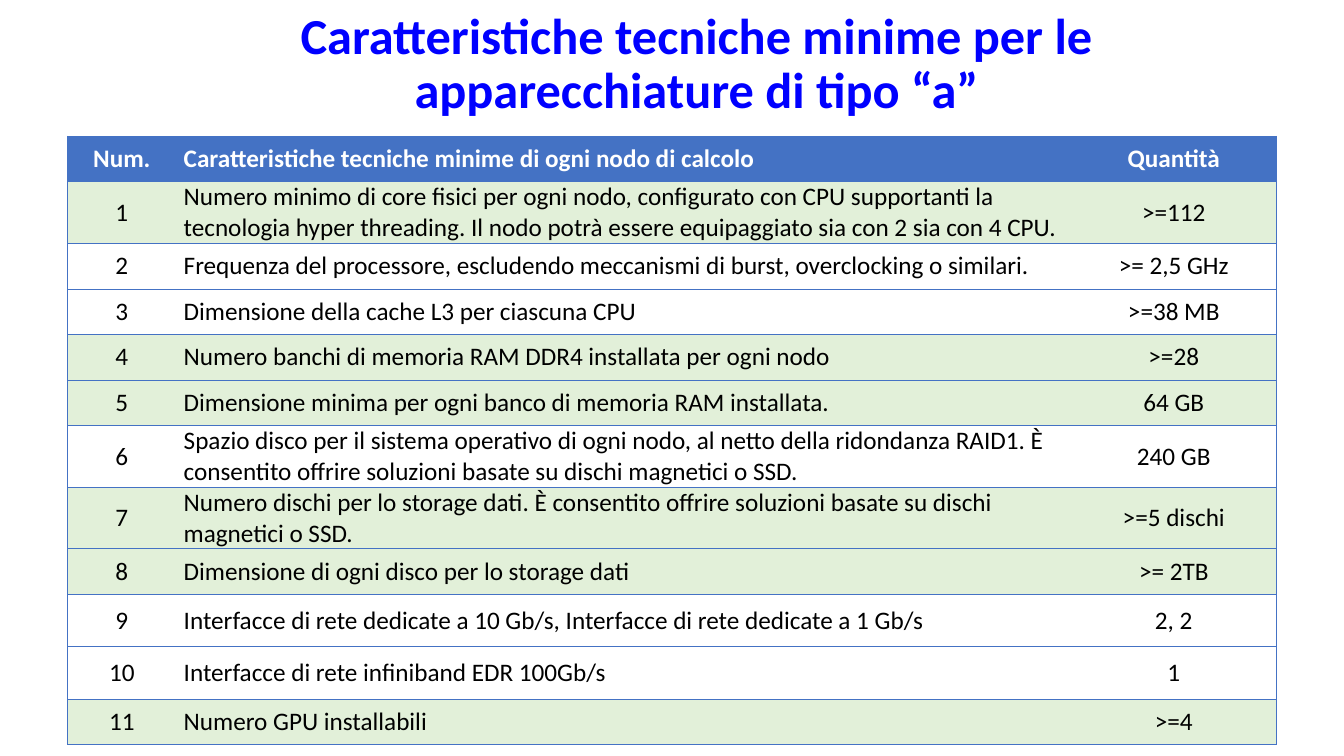
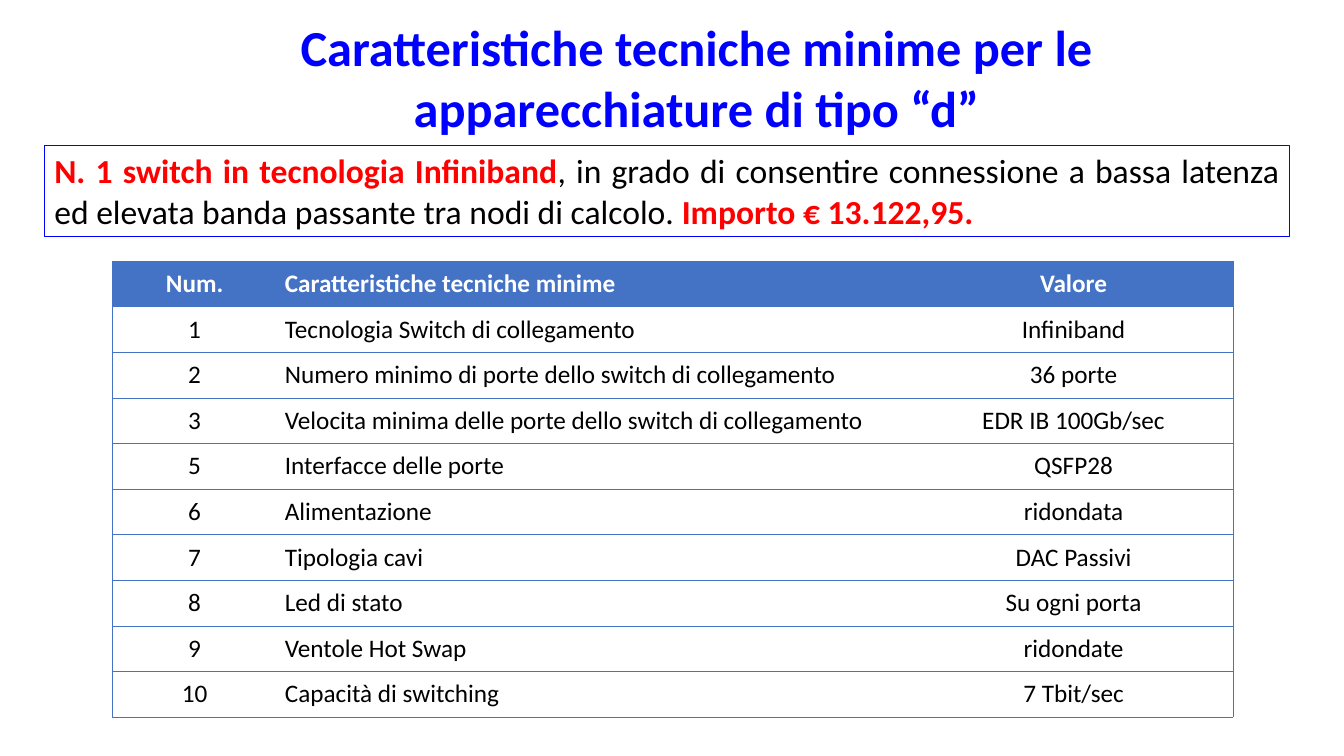
from dataclasses import dataclass
from lxml.etree import SubElement
from pptx import Presentation
from pptx.dml.color import RGBColor as Rgb
from pptx.enum.shapes import MSO_SHAPE as Shape
from pptx.enum.text import MSO_ANCHOR as Anchor, MSO_AUTO_SIZE as Fit, PP_ALIGN as Align
from pptx.oxml.ns import qn
from pptx.slide import Slide
from pptx.text.text import _Run as Run
from pptx.util import Cm, Pt


@dataclass(frozen=True)
class Theme:
    font: str = "Calibri"
    title: Rgb = Rgb(0, 0, 255)
    head: Rgb = Rgb(0x44, 0x72, 0xC4)
    tint: Rgb = Rgb(0xE2, 0xF0, 0xD9)
    white: Rgb = Rgb(255, 255, 255)
    black: Rgb = Rgb(0, 0, 0)
    red: Rgb = Rgb(255, 0, 0)
    title_size: int = 36
    note_size: int = 24
    cell_size: int = 18
    low_row: float = 1.15
    tall_row: float = 1.32


@dataclass(frozen=True)
class Box:
    left: float
    top: float
    width: float
    height: float

    def lengths(self) -> tuple[Cm, Cm, Cm, Cm]:
        return Cm(self.left), Cm(self.top), Cm(self.width), Cm(self.height)


@dataclass(frozen=True)
class Row:
    num: str
    text: str
    value: str
    tint: bool = False
    tall: bool = False


@dataclass(frozen=True)
class Grid:
    left: float
    top: float
    widths: tuple[float, float, float]
    rows: list[Row]


THEME = Theme()

NODES = Grid(1.7, 3.43, (2.74, 22.55, 5.18), [
    Row("Num.", "Caratteristiche tecniche minime di ogni nodo di calcolo", "Quantità"),
    Row("1", "Numero minimo di core fisici per ogni nodo, configurato con CPU supportanti la "
        "tecnologia hyper threading. Il nodo potrà essere equipaggiato sia con 2 sia con 4 CPU.",
        ">=112", tint=True, tall=True),
    Row("2", "Frequenza del processore, escludendo meccanismi di burst, overclocking o similari.",
        ">= 2,5 GHz"),
    Row("3", "Dimensione della cache L3 per ciascuna CPU", ">=38 MB"),
    Row("4", "Numero banchi di memoria RAM DDR4 installata per ogni nodo", ">=28", tint=True),
    Row("5", "Dimensione minima per ogni banco di memoria RAM installata.", "64 GB", tint=True),
    Row("6", "Spazio disco per il sistema operativo di ogni nodo, al netto della ridondanza RAID1. "
        "È consentito offrire soluzioni basate su dischi magnetici o SSD.", "240 GB", tall=True),
    Row("7", "Numero dischi per lo storage dati. È consentito offrire soluzioni basate su dischi "
        "magnetici o SSD.", ">=5 dischi", tint=True, tall=True),
    Row("8", "Dimensione di ogni disco per lo storage dati", ">= 2TB", tint=True),
    Row("9", "Interfacce di rete dedicate a 10 Gb/s, Interfacce di rete dedicate a 1 Gb/s",
        "2, 2", tall=True),
    Row("10", "Interfacce di rete infiniband EDR 100Gb/s", "1", tall=True),
    Row("11", "Numero GPU installabili", ">=4", tint=True),
])

SWITCH = Grid(2.82, 6.58, (4.17, 16.05, 8.03), [
    Row("Num.", "Caratteristiche tecniche minime", "Valore"),
    Row("1", "Tecnologia Switch di collegamento", "Infiniband"),
    Row("2", "Numero minimo di porte dello switch di collegamento", "36 porte"),
    Row("3", "Velocita minima delle porte dello switch di collegamento", "EDR IB 100Gb/sec"),
    Row("5", "Interfacce delle porte", "QSFP28"),
    Row("6", "Alimentazione", "ridondata"),
    Row("7", "Tipologia cavi", "DAC Passivi"),
    Row("8", "Led di stato", "Su ogni porta"),
    Row("9", "Ventole Hot Swap", "ridondate"),
    Row("10", "Capacità di switching", "7 Tbit/sec"),
])

NOTE = [
    ("N. 1 switch in tecnologia Infiniband", True),
    (", in grado di consentire connessione a bassa latenza ed elevata banda passante "
     "tra nodi di calcolo. ", False),
    ("Importo € 13.122,95.", True),
]


def style(run: Run, size: int, color: Rgb, bold: bool) -> None:
    run.font.name = THEME.font
    run.font.size = Pt(size)
    run.font.color.rgb = color
    run.font.bold = bold


def add_title(slide: Slide, kind: str, box: Box, spacing: float) -> None:
    title = slide.shapes.title
    title.left, title.top, title.width, title.height = box.lengths()
    frame = title.text_frame
    frame.text = f"Caratteristiche tecniche minime per le apparecchiature di tipo “{kind}”"
    frame.auto_size = Fit.NONE
    frame.vertical_anchor = Anchor.TOP
    frame.margin_left = Cm(1.52)
    para = frame.paragraphs[0]
    para.alignment = Align.CENTER
    para.line_spacing = spacing
    style(para.runs[0], THEME.title_size, THEME.title, True)


def set_edges(cell, first: bool, last: bool) -> None:
    props = cell._tc.get_or_add_tcPr()
    shown = {"a:lnL": first, "a:lnR": last, "a:lnT": True, "a:lnB": True}
    for tag, drawn in shown.items():
        line = SubElement(props, qn(tag), w=str(Pt(0.5)))
        if drawn:
            fill = SubElement(line, qn("a:solidFill"))
            SubElement(fill, qn("a:srgbClr"), val=str(THEME.head))
        else:
            SubElement(line, qn("a:noFill"))


def fill_cell(cell, text: str, col: int, head: bool, tint: bool) -> None:
    set_edges(cell, col == 0, col == 2)
    if head or tint:
        cell.fill.solid()
        cell.fill.fore_color.rgb = THEME.head if head else THEME.tint
    else:
        cell.fill.background()
    cell.vertical_anchor = Anchor.MIDDLE
    cell.margin_left = cell.margin_right = Cm(0.19)
    cell.margin_top = cell.margin_bottom = 0
    cell.text_frame.text = text
    para = cell.text_frame.paragraphs[0]
    para.alignment = Align.LEFT if col == 1 else Align.CENTER
    style(para.runs[0], THEME.cell_size, THEME.white if head else THEME.black, head)


def add_grid(slide: Slide, grid: Grid) -> None:
    highs = [THEME.tall_row if row.tall else THEME.low_row for row in grid.rows]
    box = Box(grid.left, grid.top, sum(grid.widths), sum(highs))
    table = slide.shapes.add_table(len(grid.rows), len(grid.widths), *box.lengths()).table
    table.horz_banding = False
    for col, width in zip(table.columns, grid.widths):
        col.width = Cm(width)
    for i, (row, high) in enumerate(zip(grid.rows, highs)):
        table.rows[i].height = Cm(high)
        for j, text in enumerate((row.num, row.text, row.value)):
            fill_cell(table.cell(i, j), text, j, i == 0, row.tint)


def add_note(slide: Slide, box: Box) -> None:
    note = slide.shapes.add_shape(Shape.RECTANGLE, *box.lengths())
    note.shadow.inherit = False
    note.fill.background()
    note.line.color.rgb = THEME.title
    note.line.width = Pt(0.75)
    frame = note.text_frame
    frame.word_wrap = True
    frame.vertical_anchor = Anchor.TOP
    para = frame.paragraphs[0]
    para.alignment = Align.JUSTIFY
    for text, strong in NOTE:
        run = para.add_run()
        run.text = text
        style(run, THEME.note_size, THEME.red if strong else THEME.black, strong)


def main() -> None:
    deck = Presentation()
    deck.slide_width, deck.slide_height = Cm(33.87), Cm(19.05)
    layout = deck.slide_layouts[5]

    nodes = deck.slides.add_slide(layout)
    add_title(nodes, "a", Box(1.7, 0.15, 30.45, 3.05), 0.9)
    add_grid(nodes, NODES)

    switch = deck.slides.add_slide(layout)
    add_title(switch, "d", Box(1.7, 0.28, 30.45, 3.33), 1.0)
    add_grid(switch, SWITCH)
    add_note(switch, Box(1.12, 3.66, 31.37, 2.31))

    deck.save("out.pptx")


if __name__ == "__main__":
    main()
